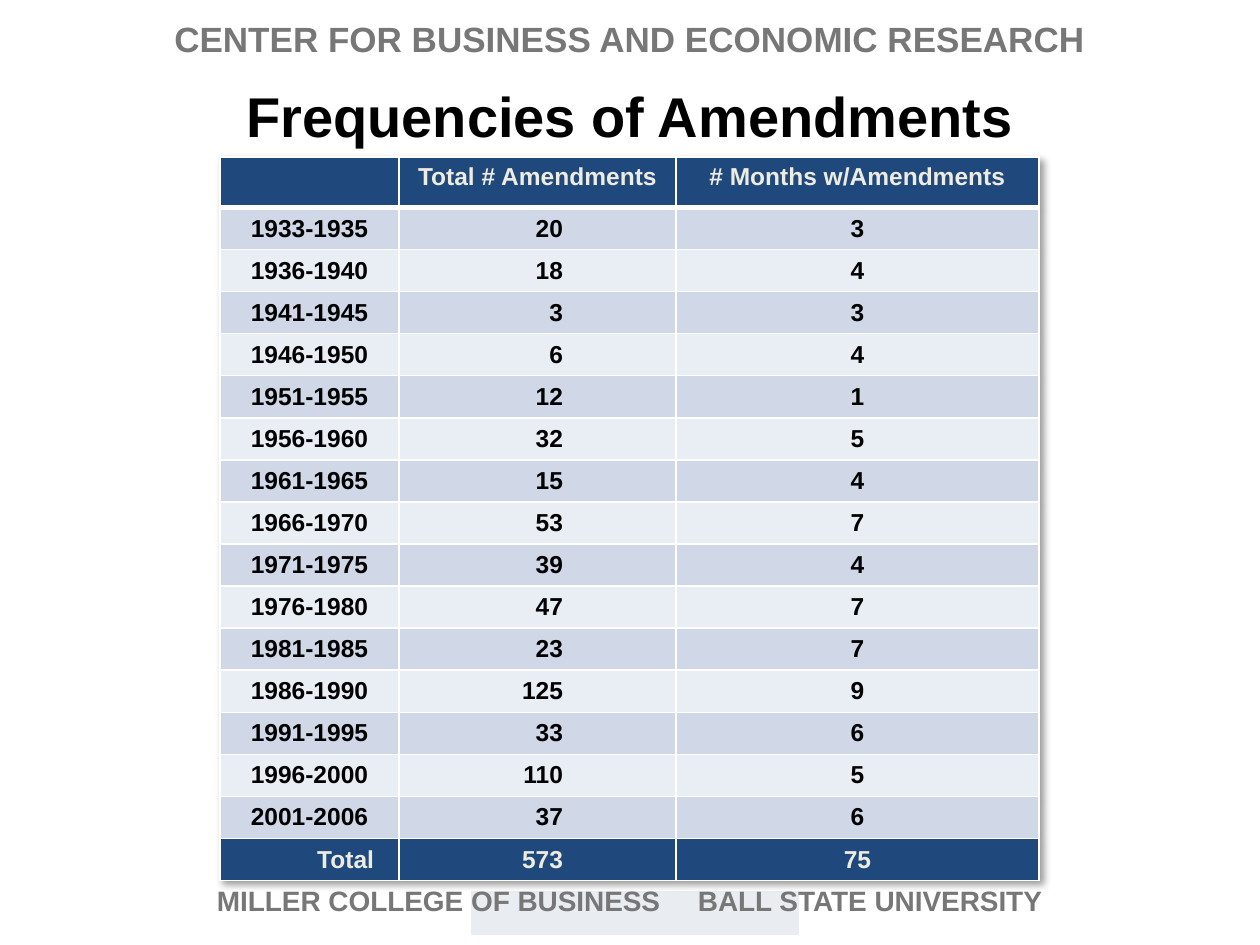
from pptx import Presentation
from pptx.dml.color import RGBColor
from pptx.enum.shapes import MSO_SHAPE as Shape
from pptx.enum.text import MSO_ANCHOR as Anchor, PP_ALIGN as Align
from pptx.oxml import parse_xml
from pptx.oxml.ns import nsdecls
from pptx.util import Pt

COLORS = {"white": "FFFFFF", "pale": "E9ECF1", "gray": "777777", "black": "000000",
          "navy": "1F497D", "cream": "EEECE1", "odd": "D0D8E8", "even": "E9EDF4"}
FONT = "Arial"
HEAD = ("", "Total # Amendments", "# Months w/Amendments")
ROWS = [
    ("1933-1935", 20, 3), ("1936-1940", 18, 4), ("1941-1945", 3, 3),
    ("1946-1950", 6, 4), ("1951-1955", 12, 1), ("1956-1960", 32, 5),
    ("1961-1965", 15, 4), ("1966-1970", 53, 7), ("1971-1975", 39, 4),
    ("1976-1980", 47, 7), ("1981-1985", 23, 7), ("1986-1990", 125, 9),
    ("1991-1995", 33, 6), ("1996-2000", 110, 5), ("2001-2006", 37, 6),
]
TOTAL = ("Total", 573, 75)


def px(n):
    return round(n * 914400 / 126)


def rgb(name):
    return RGBColor.from_string(COLORS[name])


def node(xml):
    """Parse XML whose root takes the drawing namespace at the mark NS."""
    return parse_xml(xml.replace("NS", nsdecls("a"), 1))


class Deck:
    def __init__(self, wide, high):
        self.prs = Presentation()
        self.prs.slide_width, self.prs.slide_height = px(wide), px(high)
        self.slide = self.prs.slides.add_slide(self.prs.slide_layouts[5])
        self.shapes = self.slide.shapes

    def text(self, para, words, size, color, align=Align.CENTER):
        para.alignment = align
        run = para.add_run()
        run.text = words
        run.font.name, run.font.size, run.font.bold = FONT, Pt(size), True
        run.font.color.rgb = rgb(color)

    def rect(self, box, color, line=False):
        shape = self.shapes.add_shape(Shape.RECTANGLE, *map(px, box))
        shape.shadow.inherit = False
        shape.fill.solid()
        shape.fill.fore_color.rgb = rgb(color)
        if line:
            shape.line.color.rgb = rgb(color)
            shape.line.width = Pt(0.75)
        else:
            shape.line.fill.background()

    def label(self, box, words, size, color, inset=None, tab=None):
        """Centred text, or text from a left inset with one tab stop."""
        frame = self.shapes.add_textbox(*map(px, box)).text_frame
        frame.word_wrap = True
        para = frame.paragraphs[0]
        if tab:
            frame.margin_left = px(inset)
            props = para._p.get_or_add_pPr()
            props.append(node(f'<a:tabLst NS><a:tab pos="{px(tab)}" algn="l"/></a:tabLst>'))
        self.text(para, words, size, color, Align.LEFT if tab else Align.CENTER)

    def title(self, box, words, size, color):
        shape = self.shapes.title
        shape.left, shape.top, shape.width, shape.height = map(px, box)
        shape.text_frame.vertical_anchor = Anchor.MIDDLE
        self.text(shape.text_frame.paragraphs[0], words, size, color)

    def edge(self, cell, heavy):
        """White borders, with a thick lower one under the heading."""
        props = cell._tc.get_or_add_tcPr()
        for i, side in enumerate("LRTB"):
            wide = Pt(3 if heavy and side == "B" else 1)
            props.insert(i, node(
                f'<a:ln{side} NS w="{wide}"><a:solidFill>'
                f'<a:srgbClr val="{COLORS["white"]}"/></a:solidFill></a:ln{side}>'))

    def table(self, box, widths, rows):
        frame = self.shapes.add_table(len(rows), len(widths), *map(px, box))
        grid = frame.table
        grid._tbl.tblPr.insert(0, node(
            '<a:effectLst NS><a:outerShdw blurRad="50800" dist="38100" dir="2700000" '
            'algn="tl" rotWithShape="0"><a:srgbClr val="000000"><a:alpha val="40000"/>'
            '</a:srgbClr></a:outerShdw></a:effectLst>'))
        for col, wide in zip(grid.columns, widths):
            col.width = px(wide)
        last = len(rows) - 1
        for r, row in enumerate(rows):
            dark = r in (0, last)
            fill = "navy" if dark else "odd" if r % 2 else "even"
            for c, value in enumerate(row):
                cell = grid.cell(r, c)
                cell.fill.solid()
                cell.fill.fore_color.rgb = rgb(fill)
                self.edge(cell, r == 0)
                cell.vertical_anchor = Anchor.MIDDLE if r else Anchor.TOP
                right = r > 0 and c == 1 or r == last and c == 0
                if right:
                    cell.margin_right = px(113 if c else 25)
                self.text(cell.text_frame.paragraphs[0], str(value), 14,
                          "cream" if dark else "black",
                          Align.RIGHT if right else Align.CENTER)


def main():
    deck = Deck(1260, 945)
    deck.rect((472, 892, 326, 42), "pale", line=True)
    deck.rect((0, 0, 1260, 73), "white")
    deck.label((63, 877, 1134, 47), "MILLER COLLEGE OF BUSINESS\tBALL STATE UNIVERSITY",
               16, "gray", inset=154, tab=481)
    deck.label((10, 11, 1239, 55), "CENTER FOR BUSINESS AND ECONOMIC RESEARCH", 20, "gray")
    deck.title((63, 73, 1134, 85), "Frequencies of Amendments", 32, "black")
    deck.table((220, 157, 819, 704), (179, 277, 363), [HEAD, *ROWS, TOTAL])
    deck.prs.save("out.pptx")


if __name__ == "__main__":
    main()
